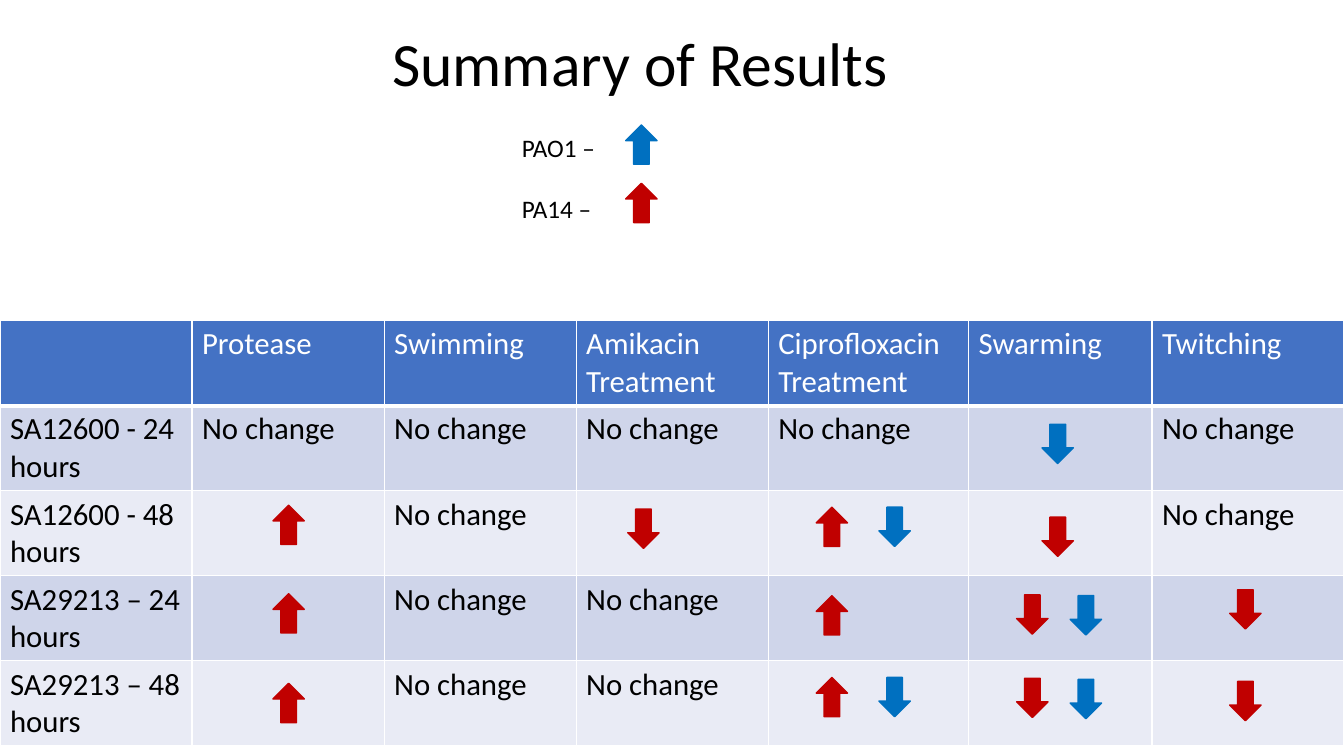
import pptx
import pptx.util
import pptx.dml.color
import pptx.enum.shapes
import pptx.enum.text
import pptx.oxml
import pptx.oxml.ns
from dataclasses import dataclass

Cm, Pt = pptx.util.Cm, pptx.util.Pt


@dataclass(frozen=True)
class Theme:
    font: str = "Calibri"
    black: str = "000000"
    white: str = "FFFFFF"
    head: str = "4472C4"
    bands: tuple = ("CFD5EA", "E9EBF5")
    red: str = "C00000"
    blue: str = "0070C0"
    title: int = 44
    cell: int = 22
    key: int = 18


def rgb(code):
    return pptx.dml.color.RGBColor.from_string(code)


class Page:
    def __init__(self, deck, theme):
        self.theme = theme
        self.slide = deck.slides.add_slide(deck.slide_layouts[5])
        self.shapes = self.slide.shapes

    def style(self, frame, size, color):
        for par in frame.paragraphs:
            par.alignment = pptx.enum.text.PP_ALIGN.LEFT
            par.font.name = self.theme.font
            par.font.size = Pt(size)
            par.font.bold = False
            par.font.color.rgb = rgb(color)

    def title(self, text, left, top, width, height):
        box = self.shapes.title
        box.left, box.top, box.width, box.height = map(Cm, (left, top, width, height))
        frame = box.text_frame
        frame.text = text
        frame.vertical_anchor = pptx.enum.text.MSO_ANCHOR.MIDDLE
        frame.paragraphs[0].line_spacing = 0.9
        self.style(frame, self.theme.title, self.theme.black)

    def text(self, text, left, top, width, height, gap):
        box = self.shapes.add_textbox(*map(Cm, (left, top, width, height)))
        frame = box.text_frame
        frame.word_wrap = True
        frame.text = text
        self.style(frame, self.theme.key, self.theme.black)
        for par in frame.paragraphs[1:]:
            par.space_before = Pt(gap)

    def border(self, cell, low):
        props = cell._tc.get_or_add_tcPr()
        for side, width in (("L", 1), ("R", 1), ("T", 1), ("B", low)):
            props.append(pptx.oxml.parse_xml(
                f'<a:ln{side} {pptx.oxml.ns.nsdecls("a")} w="{Pt(width)}"><a:solidFill>'
                f'<a:srgbClr val="{self.theme.white}"/></a:solidFill></a:ln{side}>'))

    def table(self, rows, left, top, widths, height):
        theme = self.theme
        frame = self.shapes.add_table(
            len(rows), len(widths), Cm(left), Cm(top),
            Cm(sum(widths)), Cm(height * len(rows)))
        grid = frame.table
        for col, width in zip(grid.columns, widths):
            col.width = Cm(width)
        for r, row in enumerate(rows):
            grid.rows[r].height = Cm(height)
            head = r == 0
            for c, text in enumerate(row):
                cell = grid.cell(r, c)
                cell.text = text
                self.style(cell.text_frame, theme.cell,
                           theme.white if head else theme.black)
                self.border(cell, 3 if head else 1)
                cell.fill.solid()
                cell.fill.fore_color.rgb = rgb(
                    theme.head if head else theme.bands[(r - 1) % 2])

    def arrow(self, left, top, color, turn):
        mark = self.shapes.add_shape(
            pptx.enum.shapes.MSO_SHAPE.UP_ARROW, Cm(left), Cm(top), Cm(0.79), Cm(0.99))
        mark.rotation = turn
        mark.shadow.inherit = False
        mark.fill.solid()
        mark.fill.fore_color.rgb = rgb(color)
        mark.line.color.rgb = rgb(color)
        mark.line.width = Pt(1)


def main():
    theme = Theme()
    deck = pptx.Presentation()
    deck.slide_width, deck.slide_height = Cm(33.87), Cm(19.05)
    page = Page(deck, theme)

    # Title
    page.title("Summary of Results", 9.63, 0, 13.21, 3.35)

    # Results table
    same = "No change"
    rows = [
        ("", "Protease", "Swimming", "Amikacin\nTreatment",
         "Ciprofloxacin\nTreatment", "Swarming", "Twitching"),
        ("SA12600 - 24 hours", same, same, same, same, "", same),
        ("SA12600 - 48 hours", "", same, "", "", "", same),
        ("SA29213 – 24 hours", "", same, same, "", "", ""),
        ("SA29213 – 48 hours", "", same, same, "", "", ""),
    ]
    page.table(rows, 0, 8.08, [4.84] * 4 + [5.05, 4.62, 4.84], 2.14)

    # Strain key
    page.text("PAO1 –\nPA14 –", 12.9, 3.2, 5.74, 2.57, gap=22)

    # Arrows: left edge, colour, turn, top edges
    up, down = 0, 180
    marks = [
        (15.77, theme.blue, up, [3.15]),                    # key
        (15.77, theme.red, up, [4.62]),
        (6.88, theme.red, up, [12.73, 14.96, 17.22]),       # protease
        (15.82, theme.red, down, [12.83]),                  # amikacin
        (20.57, theme.red, up, [12.78, 15.01, 17.07]),      # ciprofloxacin
        (22.15, theme.blue, down, [12.78, 17.07]),
        (26.26, theme.blue, down, [10.69]),                 # swarming
        (26.26, theme.red, down, [13.03]),
        (25.62, theme.red, down, [14.99, 17.09]),
        (26.97, theme.blue, down, [15.01, 17.12]),
        (30.99, theme.red, down, [14.86, 17.17]),           # twitching
    ]
    for left, color, turn, tops in marks:
        for top in tops:
            page.arrow(left, top, color, turn)

    deck.save("out.pptx")


if __name__ == "__main__":
    main()
